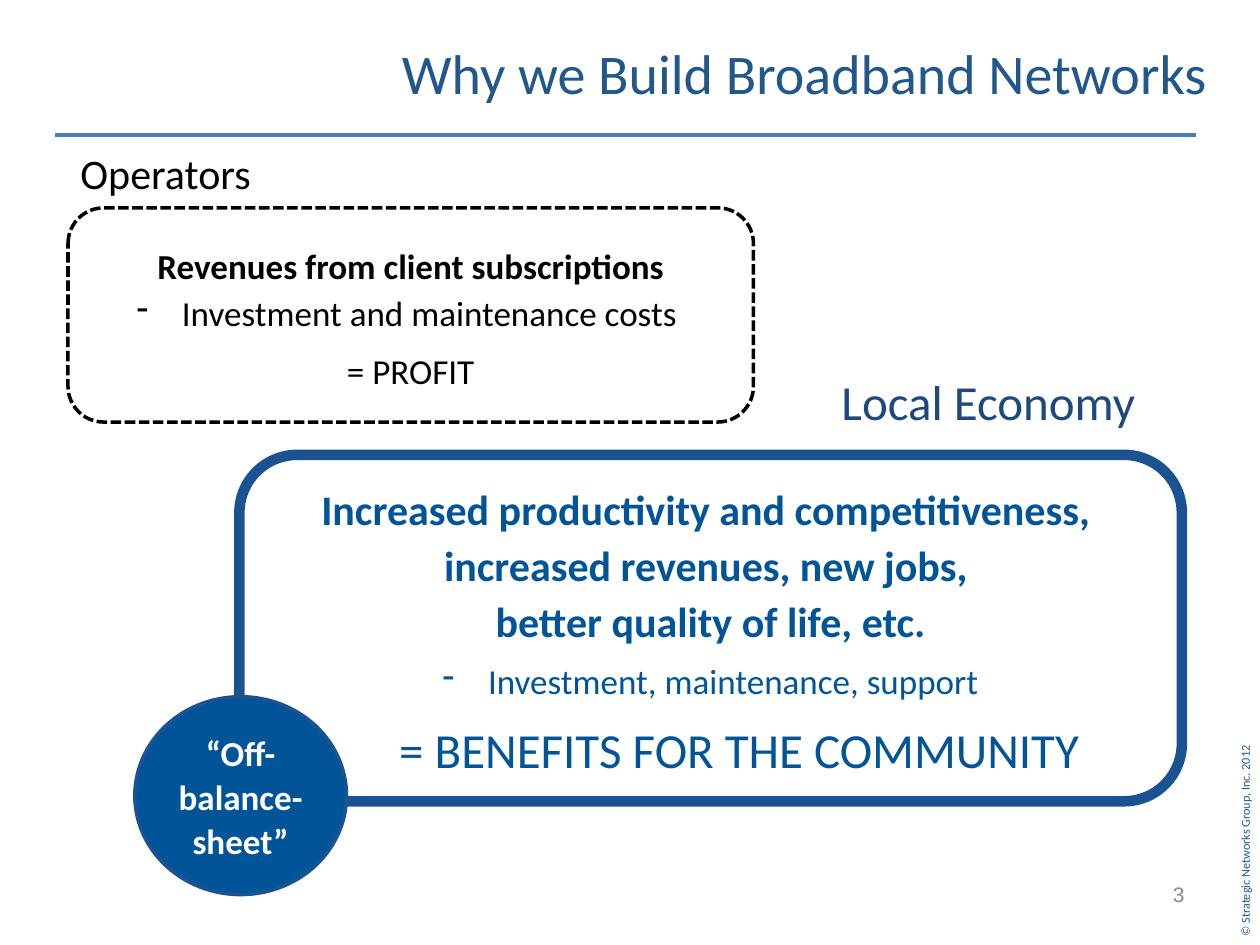
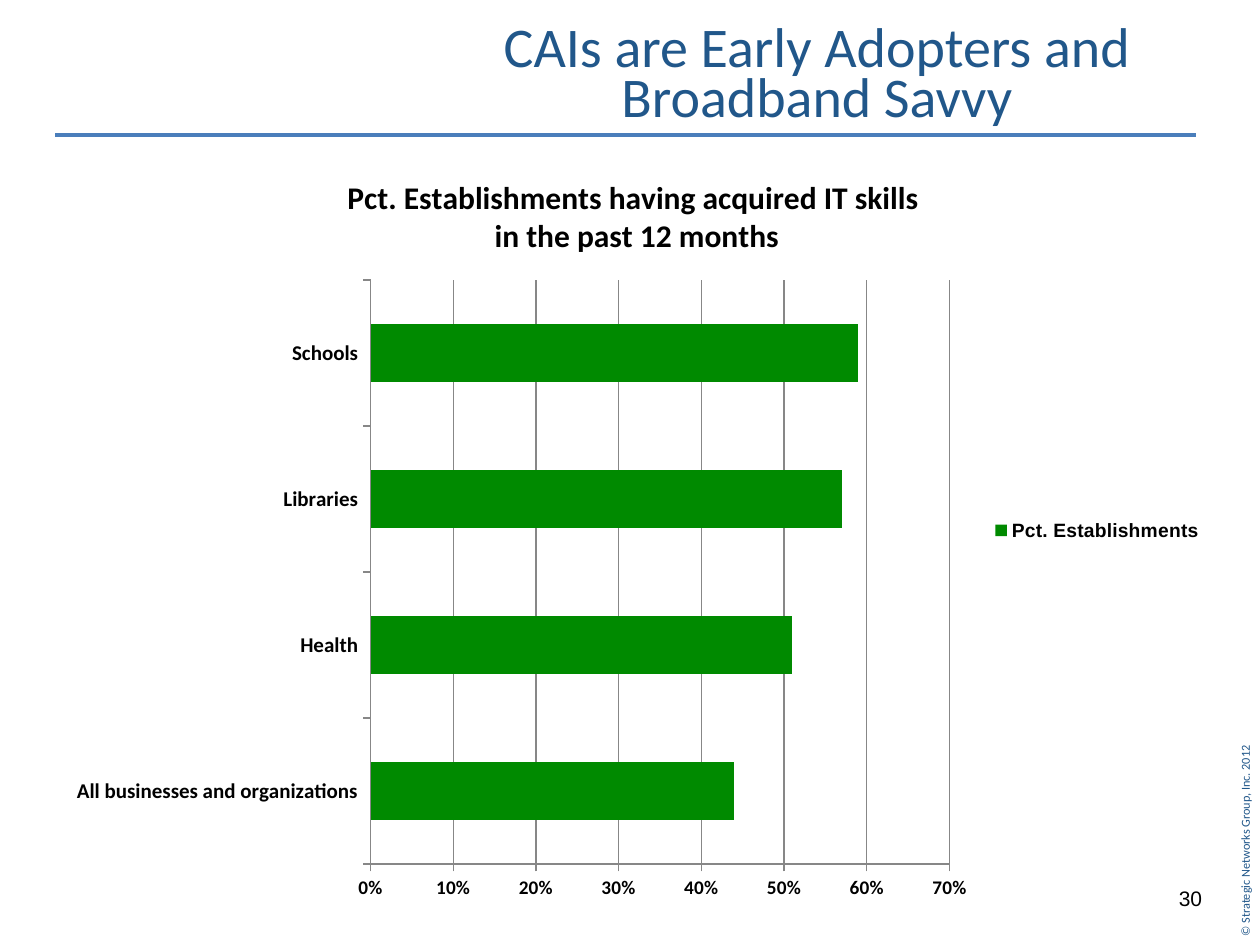
from dataclasses import dataclass

from lxml import etree
from pptx import Presentation
from pptx import util as u
from pptx.chart.data import CategoryChartData
from pptx.dml.color import RGBColor
from pptx.enum import chart as charts, dml, shapes, text
from pptx.oxml import parse_xml
from pptx.oxml.ns import nsdecls, qn

# Grid of 100 columns by 75 rows, and the shared palette
COLUMNS, ROWS = 100, 75
CELL = u.Inches(0.1)
TITLE_BLUE, RULE_BLUE, NAVY = "21578A", "4A7EBB", "1F497D"
DEEP_BLUE, EDGE_BLUE = "005497", "1B5392"
BLACK, WHITE, GREY, GREEN = "000000", "FFFFFF", "898989", "008A00"
AXIS_GREY = "878787"
BODY_FONT, NUMBER_FONT = "Calibri", "Arial"
LEFT, CENTER, RIGHT = text.PP_ALIGN.LEFT, text.PP_ALIGN.CENTER, text.PP_ALIGN.RIGHT
TOP, MIDDLE = text.MSO_ANCHOR.TOP, text.MSO_ANCHOR.MIDDLE


@dataclass(frozen=True)
class Place:
    """A rectangle in grid columns and rows."""
    column: float
    row: float
    width: float
    height: float

    def lengths(self) -> list:
        return [cells(n) for n in (self.column, self.row, self.width, self.height)]


@dataclass(frozen=True)
class Line:
    """A paragraph and its format."""
    words: str
    size: float
    color: str = BLACK
    bold: bool = False
    font: str = BODY_FONT
    align: text.PP_ALIGN = CENTER
    spacing: float | u.Pt | None = None
    before: float = 0
    indent: float = 0
    bullet: str = ""


@dataclass(frozen=True)
class Panel:
    """An outlined shape holding text."""
    kind: shapes.MSO_SHAPE
    place: Place
    lines: list
    edge: str
    weight: float
    fill: str = ""
    dash: dml.MSO_LINE | None = None
    side: float = 1


def cells(count: float) -> int:
    return round(count * CELL)


def color_of(code: str) -> RGBColor:
    return RGBColor.from_string(code)


def style_font(font, name: str, size: float, color: str = BLACK, bold: bool = False) -> None:
    font.name, font.size, font.bold = name, u.Pt(size), bold
    font.color.rgb = color_of(color)


def write(frame, lines: list, *, anchor=TOP, wrap: bool = True,
          left: float = 1, right: float = 1, grow: bool = False) -> None:
    frame.word_wrap = wrap
    frame.auto_size = text.MSO_AUTO_SIZE.SHAPE_TO_FIT_TEXT if grow else text.MSO_AUTO_SIZE.NONE
    frame.vertical_anchor = anchor
    frame.margin_left, frame.margin_right = cells(left), cells(right)
    for number, line in enumerate(lines):
        para = frame.add_paragraph() if number else frame.paragraphs[0]
        para.alignment = line.align
        if line.spacing:
            para.line_spacing = line.spacing
        if line.before:
            para.space_before = u.Pt(line.before)
        properties = para._p.get_or_add_pPr()
        if line.indent:
            properties.set("marL", str(cells(line.indent)))
        if line.bullet:
            properties.set("indent", str(-cells(line.indent)))
            etree.SubElement(properties, qn("a:buChar")).set("char", line.bullet)
        span = para.add_run()
        span.text = line.words
        style_font(span.font, line.font, line.size, line.color, line.bold)


def add_text(page, place: Place, lines: list, **options):
    box = page.shapes.add_textbox(*place.lengths())
    write(box.text_frame, lines, **options)
    return box


def add_panel(page, panel: Panel) -> None:
    shape = page.shapes.add_shape(panel.kind, *panel.place.lengths())
    shape.shadow.inherit = False
    if panel.fill:
        shape.fill.solid()
        shape.fill.fore_color.rgb = color_of(panel.fill)
    else:
        shape.fill.background()
    shape.line.color.rgb = color_of(panel.edge)
    shape.line.width = u.Pt(panel.weight)
    if panel.dash:
        shape.line.dash_style = panel.dash
    write(shape.text_frame, panel.lines, anchor=MIDDLE, left=panel.side, right=panel.side)


def add_page(deck):
    """Blank page with the rule and the copyright line."""
    page = deck.slides.add_slide(deck.slide_layouts[6])
    rule = page.shapes.add_connector(shapes.MSO_CONNECTOR.STRAIGHT,
                                     cells(4.4), cells(10.7), cells(94.9), cells(10.7))
    rule.line.color.rgb = color_of(RULE_BLUE)
    rule.line.width = u.Pt(2.25)
    rule._element.spPr.append(parse_xml(f"<a:effectLst {nsdecls('a')}/>"))
    notice = add_text(page, Place(89.9, 64.7, 17.8, 2.6),
                      [Line("© Strategic Networks Group, Inc. 2012", 7, TITLE_BLUE, align=LEFT)],
                      anchor=MIDDLE, wrap=False, left=0.6)
    notice.rotation = 270
    return page


def add_title(page, place: Place, rows: list, align, anchor=TOP) -> None:
    add_text(page, place, [Line(row, 32, TITLE_BLUE, align=align, spacing=0.75)
                           for row in rows], anchor=anchor)


def add_number(page, place: Place, number: str, color: str) -> None:
    add_text(page, place, [Line(number, 12, color, font=NUMBER_FONT, align=RIGHT)])


def build_reasons(deck) -> None:
    page = add_page(deck)
    tight, loose = u.Pt(27), u.Pt(32)

    # Operators
    add_panel(page, Panel(shapes.MSO_SHAPE.ROUNDED_RECTANGLE, Place(5.4, 16.5, 54.4, 17), [
        Line("Revenues from client subscriptions", 20, bold=True, spacing=tight),
        Line("Investment and maintenance costs ", 20, spacing=tight, indent=3.6, bullet="-"),
        Line("= PROFIT", 20, spacing=tight, before=6),
    ], BLACK, 2, dash=dml.MSO_LINE.SQUARE_DOT))
    add_text(page, Place(5.4, 11.2, 15.9, 5), [Line("Operators", 24, align=LEFT)],
             wrap=False, grow=True)

    # Local economy
    add_text(page, Place(65.8, 29, 25.9, 5.7), [Line("Local Economy", 28, NAVY, align=LEFT)],
             wrap=False, grow=True)
    gains = ["Increased productivity and competitiveness, ",
             "increased revenues, new jobs, ", "better quality of life, etc."]
    add_panel(page, Panel(shapes.MSO_SHAPE.ROUNDED_RECTANGLE, Place(19, 36.1, 74.8, 27.5), [
        *[Line(gain, 24, DEEP_BLUE, True, spacing=loose) for gain in gains],
        Line("Investment, maintenance, support", 20, DEEP_BLUE, spacing=loose,
             indent=3.6, bullet="-"),
        Line("= BENEFITS FOR THE COMMUNITY", 28, DEEP_BLUE, spacing=loose,
             before=12, indent=4.5),
    ], EDGE_BLUE, 6, WHITE, side=0))

    add_number(page, Place(71.7, 69.5, 23.3, 4), "3", GREY)
    add_title(page, Place(27.8, 3.8, 69, 6), ["Why we Build Broadband Networks"], RIGHT)
    add_panel(page, Panel(shapes.MSO_SHAPE.OVAL, Place(10.7, 55.3, 16.8, 15.7), [
        Line("“Off- balance-sheet”", 20, WHITE, True, spacing=u.Pt(25)),
    ], EDGE_BLUE, 2, DEEP_BLUE))


def set_plot_area(chart, left: float, top: float, width: float, height: float) -> None:
    """Fix the inner plot area, in shares of the chart."""
    plot_area = chart._chartSpace.chart.plotArea
    for old in plot_area.findall(qn("c:layout")):
        plot_area.remove(old)
    sizes = "".join(f'<c:{tag} val="{share}"/>'
                    for tag, share in zip("xywh", (left, top, width, height)))
    plot_area.insert(0, parse_xml(
        f'<c:layout {nsdecls("c")}><c:manualLayout><c:layoutTarget val="inner"/>'
        f'<c:xMode val="edge"/><c:yMode val="edge"/>{sizes}</c:manualLayout></c:layout>'))


def add_skills_chart(page) -> None:
    data = CategoryChartData(number_format="0%")
    data.categories = ["All businesses and organizations", "Health", "Libraries", "Schools"]
    data.add_series("Pct. Establishments", [0.44, 0.51, 0.57, 0.59])
    chart = page.shapes.add_chart(charts.XL_CHART_TYPE.BAR_STACKED,
                                  *Place(4.6, 12, 91.9, 60.2).lengths(), data).chart
    style_font(chart.font, NUMBER_FONT, 10)

    # Heading
    heading = chart.chart_title.text_frame
    for number, row in enumerate(["Pct. Establishments having acquired IT skills ",
                                  "in the past 12 months"]):
        para = heading.add_paragraph() if number else heading.paragraphs[0]
        span = para.add_run()
        span.text = row
        style_font(span.font, BODY_FONT, 18, bold=True)

    # Bars
    plot = chart.plots[0]
    plot.gap_width, plot.overlap, plot.vary_by_categories = 150, 100, False
    bars = plot.series[0].format.fill
    bars.solid()
    bars.fore_color.rgb = color_of(GREEN)

    # Axes
    shares = chart.value_axis
    for axis, size in ((chart.category_axis, 12), (shares, 11)):
        style_font(axis.tick_labels.font, BODY_FONT, size, bold=True)
        axis.major_tick_mark = charts.XL_TICK_MARK.OUTSIDE
        axis.format.line.color.rgb = color_of(AXIS_GREY)
    shares.minimum_scale, shares.maximum_scale, shares.major_unit = 0, 0.7, 0.1
    shares.tick_labels.number_format = "#0%"
    shares.tick_labels.number_format_is_linked = False
    shares.has_major_gridlines = True
    shares.major_gridlines.format.line.color.rgb = color_of(AXIS_GREY)

    # Legend
    chart.has_legend = True
    chart.legend.position = charts.XL_LEGEND_POSITION.RIGHT
    chart.legend.include_in_layout = False
    style_font(chart.legend.font, NUMBER_FONT, 11, bold=True)
    set_plot_area(chart, 0.27, 0.17, 0.5, 0.77)


def build_adopters(deck) -> None:
    page = add_page(deck)
    add_number(page, Place(86.1, 69.8, 10.3, 4.5), "30", BLACK)
    add_skills_chart(page)
    add_title(page, Place(35.4, 2.6, 59.9, 7.1),
              ["CAIs are Early Adopters and ", "Broadband Savvy "], CENTER, MIDDLE)


def main() -> None:
    deck = Presentation()
    deck.slide_width, deck.slide_height = cells(COLUMNS), cells(ROWS)
    build_reasons(deck)
    build_adopters(deck)
    deck.save("out.pptx")


if __name__ == "__main__":
    main()
